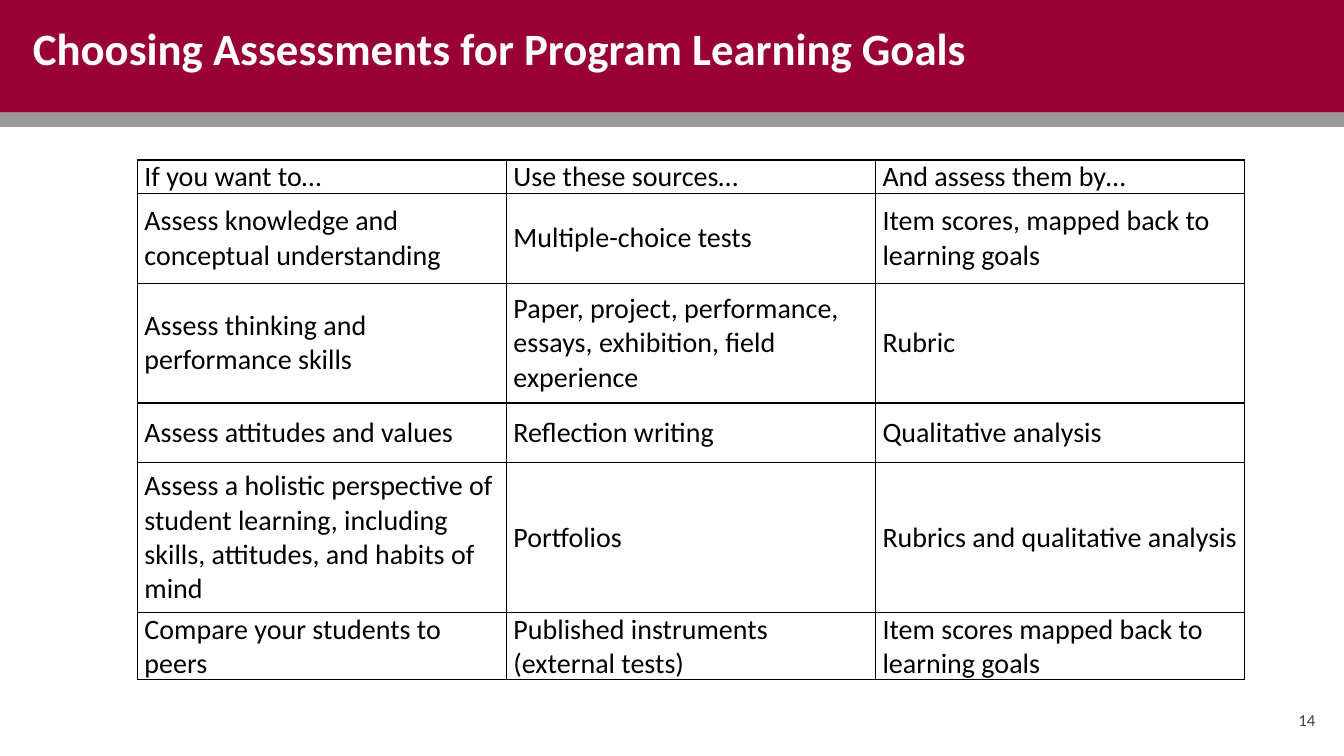
from lxml.etree import SubElement
from pptx import Presentation
from pptx.dml.color import RGBColor as RGB
from pptx.enum.shapes import MSO_SHAPE as SHAPE
from pptx.enum.text import MSO_ANCHOR as ANCHOR, PP_ALIGN as ALIGN
from pptx.oxml.ns import qn
from pptx.util import Cm, Pt

TITLE = "Choosing Assessments for Program Learning Goals"
PAGE = "14"
ROWS = [
    ("If you want to…", "Use these sources…", "And assess them by…"),
    ("Assess knowledge and conceptual understanding", "Multiple-choice tests",
     "Item scores, mapped back to learning goals"),
    ("Assess thinking and performance skills",
     "Paper, project, performance, essays, exhibition, field experience", "Rubric"),
    ("Assess attitudes and values", "Reflection writing", "Qualitative analysis"),
    ("Assess a holistic perspective of student learning, including skills, "
     "attitudes, and habits of mind", "Portfolios", "Rubrics and qualitative analysis"),
    ("Compare your students to peers", "Published instruments (external tests)",
     "Item scores mapped back to learning goals"),
]
ROW_HEIGHTS = [0.76, 2.26, 3.02, 1.5, 3.78, 1.5]
COL_WIDTH = 9.3
COLORS = {"banner": "990033", "stripe": "999999", "title": "FFFFFF",
          "text": "000000", "page": "434343", "border": "000000"}
FONT = "Calibri"
WIDTH, HEIGHT = 33.87, 19.05
BANNER_H, STRIPE_H = 2.84, 0.36


def style(p, size, color, bold=False):
    """Format every run of a paragraph."""
    for r in p.runs:
        r.font.name, r.font.size, r.font.bold = FONT, Pt(size), bold
        r.font.color.rgb = RGB.from_string(COLORS[color])


def add_band(s, top, height, color):
    """Add a full-width colour band."""
    band = s.shapes.add_shape(SHAPE.RECTANGLE, 0, Cm(top), Cm(WIDTH), Cm(height))
    band.shadow.inherit = False
    band.fill.solid()
    band.fill.fore_color.rgb = RGB.from_string(COLORS[color])
    band.line.fill.background()


def add_text(s, text, box, size, color, bold=False, align=ALIGN.LEFT, anchor=ANCHOR.TOP):
    """Add a one-paragraph text box."""
    tf = s.shapes.add_textbox(*map(Cm, box)).text_frame
    tf.word_wrap, tf.vertical_anchor = True, anchor
    tf.margin_left = tf.margin_right = tf.margin_top = tf.margin_bottom = Cm(0.25)
    tf.text = text
    tf.paragraphs[0].alignment = align
    style(tf.paragraphs[0], size, color, bold)


def set_borders(cell):
    """Draw a thin line on all four sides of a cell."""
    tcPr = cell._tc.get_or_add_tcPr()
    for i, side in enumerate(("a:lnL", "a:lnR", "a:lnT", "a:lnB")):
        ln = tcPr.makeelement(qn(side), {"w": str(Pt(1))})
        fill = SubElement(ln, qn("a:solidFill"))
        SubElement(fill, qn("a:srgbClr"), val=COLORS["border"])
        tcPr.insert(i, ln)


def add_grid(s, left, top):
    """Add the assessment table."""
    n = len(ROWS[0])
    table = s.shapes.add_table(len(ROWS), n, Cm(left), Cm(top), Cm(n * COL_WIDTH),
                               Cm(sum(ROW_HEIGHTS))).table
    table.first_row = table.horz_banding = False
    for col in table.columns:
        col.width = Cm(COL_WIDTH)
    for row, height, texts in zip(table.rows, ROW_HEIGHTS, ROWS):
        row.height = Cm(height)
        for cell, text in zip(row.cells, texts):
            cell.text = text
            cell.fill.background()
            cell.vertical_anchor = ANCHOR.MIDDLE
            cell.margin_left = cell.margin_right = Cm(0.18)
            cell.margin_top = cell.margin_bottom = 0
            style(cell.text_frame.paragraphs[0], 20, "text")
            set_borders(cell)


def main():
    """Build and save the slide."""
    prs = Presentation()
    prs.slide_width, prs.slide_height = Cm(WIDTH), Cm(HEIGHT)
    s = prs.slides.add_slide(prs.slide_layouts[6])
    add_band(s, 0, BANNER_H, "banner")
    add_band(s, BANNER_H, STRIPE_H, "stripe")
    add_text(s, TITLE, (0.58, 0.28, 31.55, 2.13), 32, "title", bold=True)
    add_grid(s, 3.46, 4.03)
    add_text(s, PAGE, (31.37, 17.58, 2.03, 1.14), 12, "page",
             align=ALIGN.RIGHT, anchor=ANCHOR.MIDDLE)
    prs.save("out.pptx")


if __name__ == "__main__":
    main()
